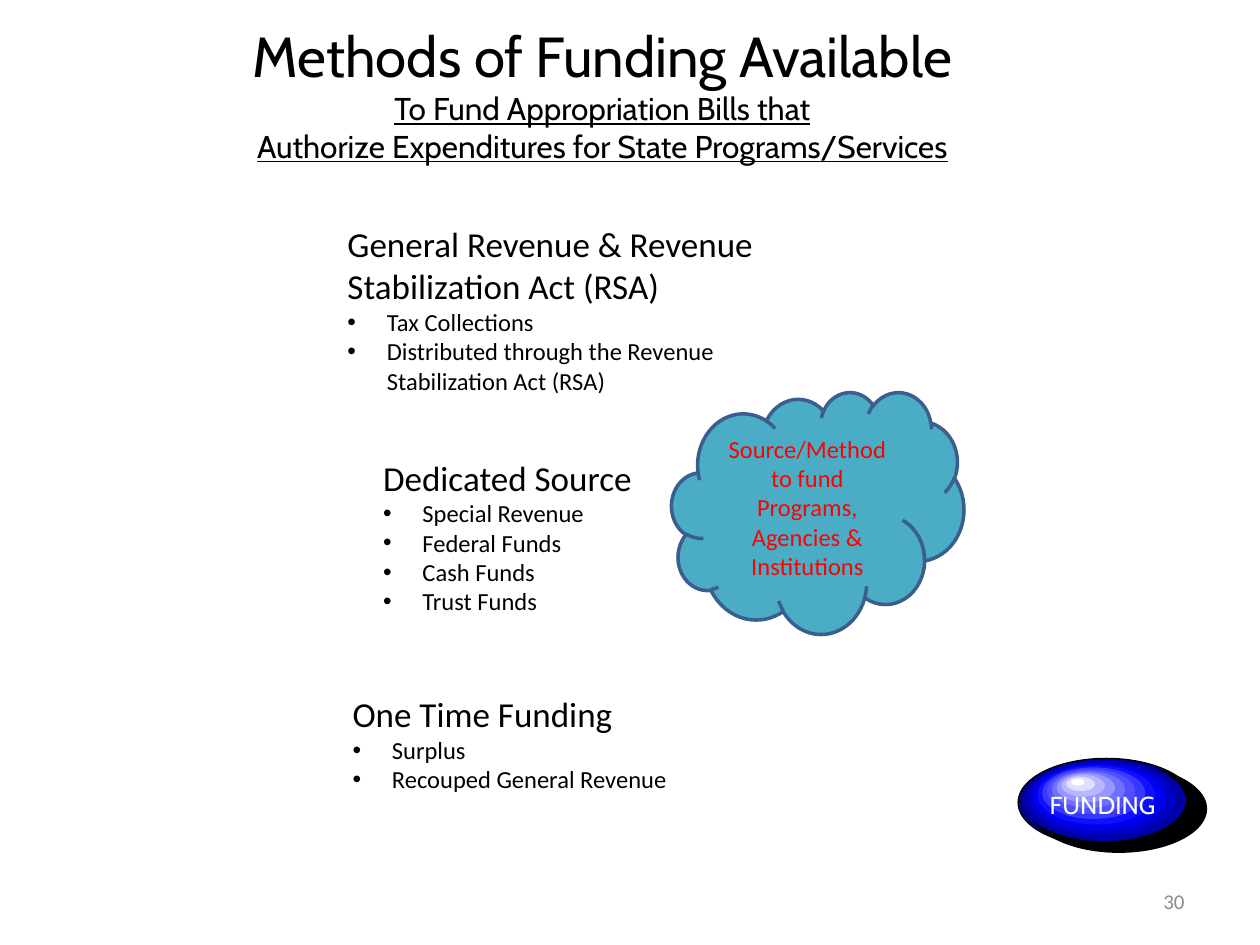
from dataclasses import dataclass

from lxml import etree
from pptx import Presentation
from pptx import util as u
from pptx.dml.color import RGBColor
from pptx.enum import shapes, text
from pptx.oxml.ns import qn


@dataclass(frozen=True)
class Theme:
    body_font: str = "Calibri"
    title_font: str = "Cabin"
    ink: str = "000000"
    cloud_fill: str = "4BACC6"
    cloud_line: str = "3A5F8C"
    cloud_text: str = "FF0000"
    page_number: str = "8C8C8C"
    button_text: str = "FFFFFF"
    button_rim: str = "00007F"
    button_gloss: tuple[str, ...] = (
        "0000A7", "0000C7", "0000EF", "1010FF", "3838FF", "5050FF",
        "7070FF", "9797FF", "B7B7FF", "DFDFFF", "FFFFFF",
    )
    title: float = 32.2
    subtitle: float = 18
    heading: float = 20
    body: float = 14
    small: float = 12


@dataclass(frozen=True)
class Area:
    left: float
    top: float
    width: float
    height: float

    def lengths(self) -> tuple[int, ...]:
        return tuple(u.Pt(n) for n in (self.left, self.top, self.width, self.height))


@dataclass(frozen=True)
class Style:
    size: float
    colour: str = Theme.ink
    font: str = Theme.body_font
    underline: bool = False


@dataclass(frozen=True)
class FundingSource:
    area: Area
    heading: str
    items: tuple[str, ...]
    level: int = 0
    insets: tuple[float, float] = (7.2, 3.6)


THEME = Theme()
BULLET_INDENT = 22.5
SOURCES = (
    FundingSource(
        Area(212.4, 257.8, 234, 98.6), "Dedicated Source",
        ("Special Revenue", "Federal Funds", "Cash Funds", "Trust Funds"),
        level=1, insets=(6.5, 2.9),
    ),
    FundingSource(
        Area(191.5, 123.8, 275.8, 106.6),
        "General Revenue & Revenue Stabilization Act (RSA)",
        ("Tax Collections", "Distributed through the Revenue Stabilization Act (RSA)"),
    ),
    FundingSource(
        Area(194.4, 392.4, 216, 65.5), "One Time Funding",
        ("Surplus", "Recouped General Revenue"),
    ),
)


def prepare_frame(frame, insets: tuple[float, float], anchor=text.MSO_ANCHOR.TOP) -> None:
    frame.word_wrap = True
    frame.vertical_anchor = anchor
    frame.margin_left = frame.margin_right = u.Pt(insets[0])
    frame.margin_top = frame.margin_bottom = u.Pt(insets[1])


def add_text_box(page, area: Area, insets=(7.2, 3.6), anchor=text.MSO_ANCHOR.TOP, grow=False):
    frame = page.shapes.add_textbox(*area.lengths()).text_frame
    prepare_frame(frame, insets, anchor)
    if grow:
        frame.auto_size = text.MSO_AUTO_SIZE.SHAPE_TO_FIT_TEXT
    return frame


def write_line(frame, words: str, style: Style, align=text.PP_ALIGN.LEFT):
    first = frame.paragraphs[0]
    para = first if not first.runs else frame.add_paragraph()
    para.alignment = align
    span = para.add_run()
    span.text = words
    span.font.size = u.Pt(style.size)
    span.font.name = style.font
    span.font.color.rgb = RGBColor.from_string(style.colour)
    if style.underline:
        span.font.underline = True
    return para


def add_bullet(para) -> None:
    properties = para._p.get_or_add_pPr()
    properties.set("marL", str(u.Pt(BULLET_INDENT)))
    properties.set("indent", str(-u.Pt(BULLET_INDENT)))
    etree.SubElement(properties, qn("a:buFont")).set("typeface", "Arial")
    etree.SubElement(properties, qn("a:buChar")).set("char", "•")


def add_shape(page, kind, area: Area, fill: str, line: str = "", weight: float = 0):
    shape = page.shapes.add_shape(kind, *area.lengths())
    shape.shadow.inherit = False
    shape.fill.solid()
    shape.fill.fore_color.rgb = RGBColor.from_string(fill)
    if line:
        shape.line.color.rgb = RGBColor.from_string(line)
        shape.line.width = u.Pt(weight)
    else:
        shape.line.fill.background()
    return shape


def draw_cloud(page) -> None:
    cloud = add_shape(page, shapes.MSO_SHAPE.CLOUD, Area(383.8, 223.9, 167, 138.2),
                      THEME.cloud_fill, THEME.cloud_line, 2)
    prepare_frame(cloud.text_frame, (7.2, 3.6), text.MSO_ANCHOR.MIDDLE)
    write_line(cloud.text_frame, "Source/Method to fund Programs, Agencies & Institutions",
               Style(THEME.body, THEME.cloud_text), text.PP_ALIGN.CENTER)


def draw_source(page, source: FundingSource) -> None:
    frame = add_text_box(page, source.area, source.insets, grow=True)
    write_line(frame, source.heading, Style(THEME.heading))
    for item in source.items:
        para = write_line(frame, item, Style(THEME.body))
        para.level = source.level
        add_bullet(para)


def draw_title(page) -> None:
    frame = add_text_box(page, Area(118.1, 10.1, 452.2, 87.8), (5, 2.2), grow=True)
    subtitle = Style(THEME.subtitle, font=THEME.title_font, underline=True)
    for words, style in (
        ("Methods of Funding Available", Style(THEME.title, font=THEME.title_font)),
        ("To Fund Appropriation Bills that", subtitle),
        ("Authorize Expenditures for State Programs/Services", subtitle),
    ):
        write_line(frame, words, style, text.PP_ALIGN.CENTER)


def draw_ellipse(page, left: float, top: float, width: float, fill: str, line: str = "") -> None:
    add_shape(page, shapes.MSO_SHAPE.OVAL, Area(left, top, width, width / 2), fill, line)


def draw_button(page) -> None:
    draw_ellipse(page, 581.8, 433.4, 100.8, THEME.button_rim, THEME.ink)
    draw_ellipse(page, 589, 437, 100.8, THEME.ink)
    for step, colour in enumerate(THEME.button_gloss):
        draw_ellipse(page, 584.6 + 2.74 * step, 434.2 + 1.08 * step, 92.9 - 8.5 * step, colour)
    label = add_text_box(page, Area(599.8, 451.6, 66.2, 17), (0, 0), grow=True)
    write_line(label, "FUNDING", Style(THEME.body, THEME.button_text, THEME.title_font))
    edge = page.shapes.add_connector(shapes.MSO_CONNECTOR.STRAIGHT,
                                     u.Pt(683.3), u.Pt(455.8), u.Pt(685.4), u.Pt(455))
    edge.line.color.rgb = RGBColor.from_string(THEME.ink)
    edge.line.width = u.Pt(3.5)
    etree.SubElement(edge._element.spPr, qn("a:effectLst"))


def draw_page_number(page) -> None:
    frame = add_text_box(page, Area(516.2, 500.4, 167.8, 28.8), anchor=text.MSO_ANCHOR.MIDDLE)
    write_line(frame, "30", Style(THEME.small, THEME.page_number), text.PP_ALIGN.RIGHT)


def main() -> None:
    deck = Presentation()
    deck.slide_width, deck.slide_height = u.Pt(720), u.Pt(540)
    page = deck.slides.add_slide(deck.slide_layouts[6])
    draw_cloud(page)
    for source in SOURCES:
        draw_source(page, source)
    draw_page_number(page)
    draw_title(page)
    draw_button(page)
    deck.save("out.pptx")


if __name__ == "__main__":
    main()
